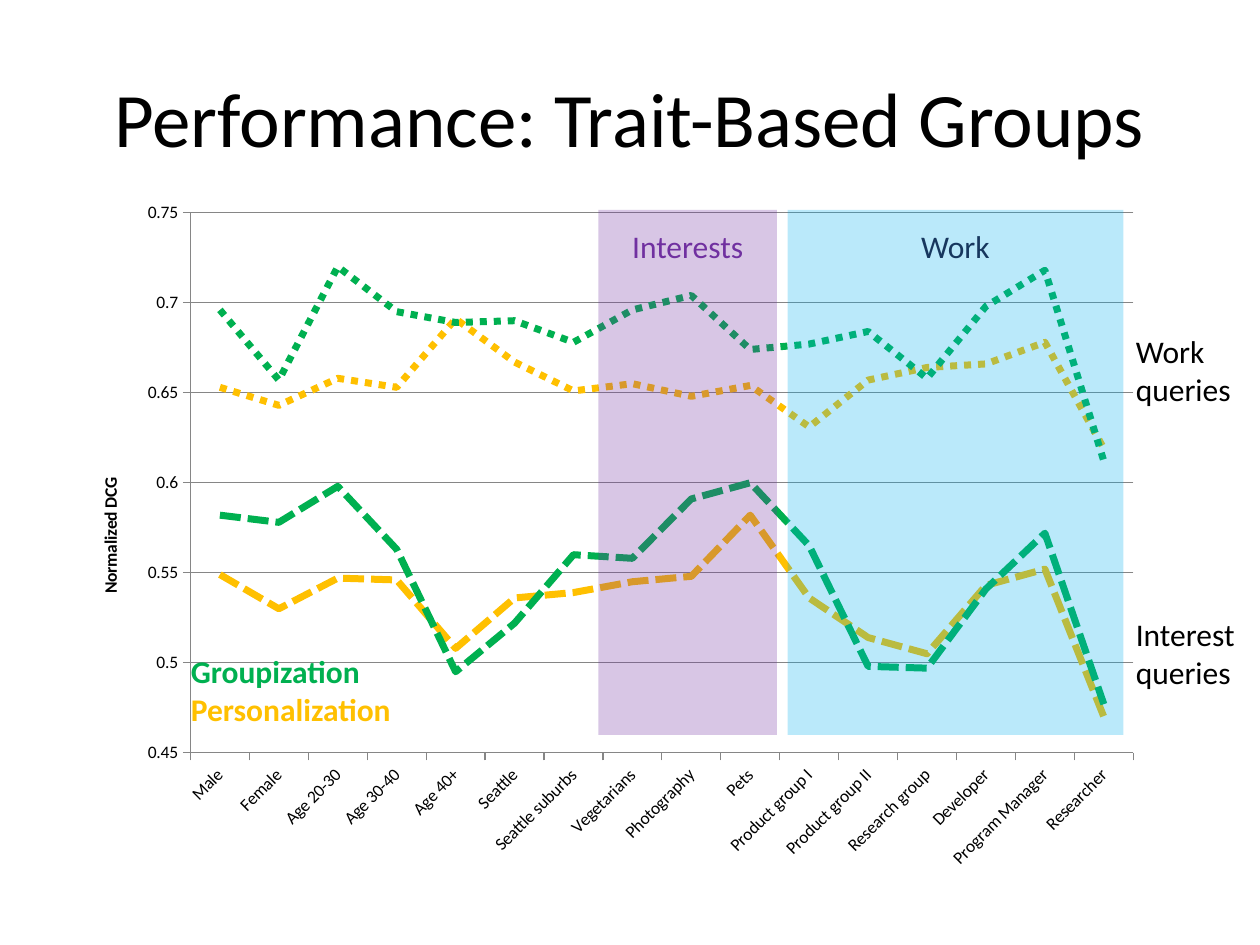
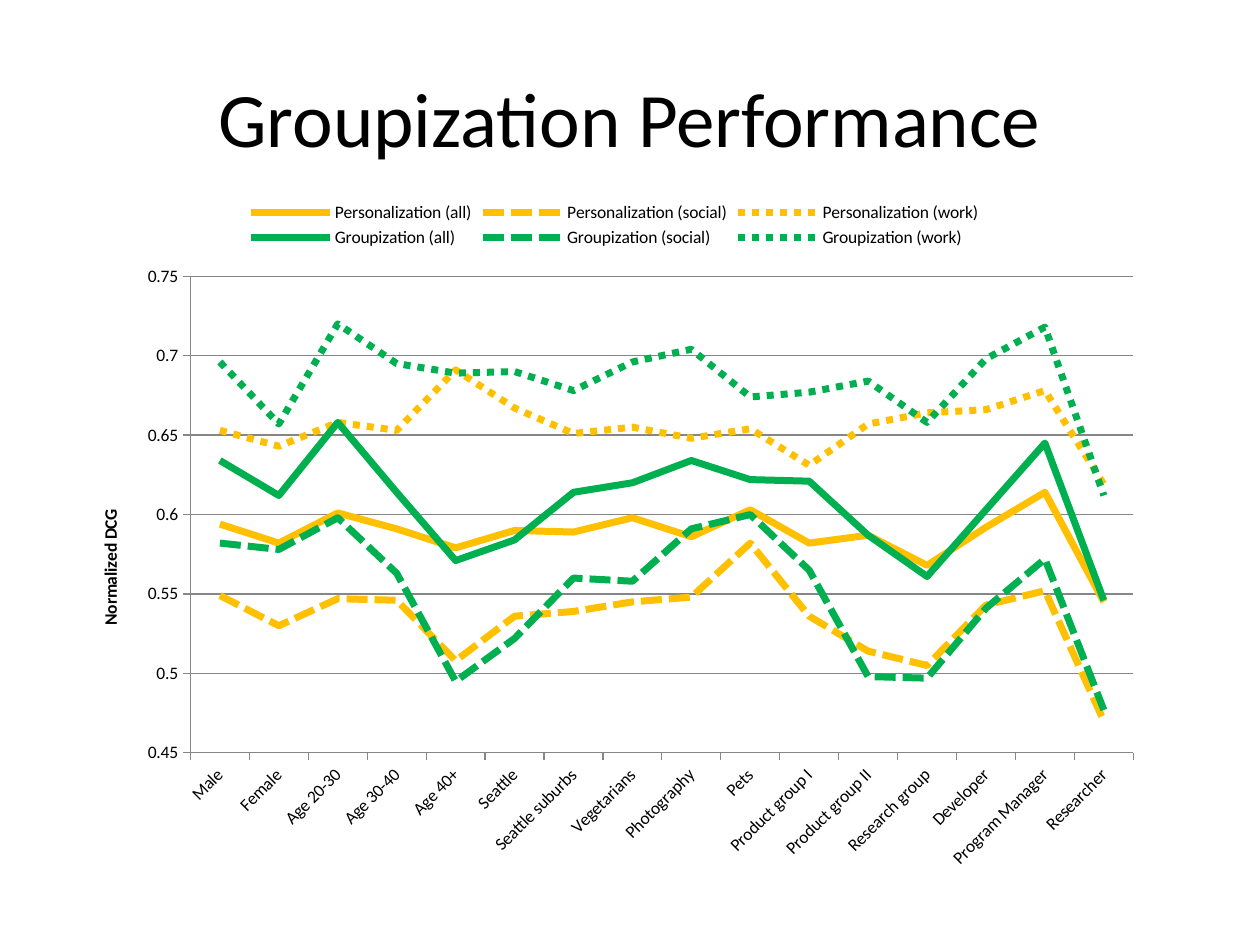
from collections import namedtuple

from lxml.etree import SubElement
from pptx import Presentation
from pptx.chart.data import CategoryChartData
from pptx.dml.color import RGBColor
from pptx.enum.chart import XL_CHART_TYPE, XL_LEGEND_POSITION, XL_TICK_MARK
from pptx.enum.dml import MSO_LINE
from pptx.enum.shapes import MSO_SHAPE
from pptx.enum.text import MSO_ANCHOR, PP_ALIGN
from pptx.oxml.ns import qn
from pptx.util import Pt

Box = namedtuple("Box", "left top width height")

BLACK = RGBColor(0x00, 0x00, 0x00)
GRID_GRAY = RGBColor(0x86, 0x86, 0x86)
AMBER = RGBColor(0xFF, 0xC0, 0x00)
GREEN = RGBColor(0x00, 0xB0, 0x50)
PURPLE = RGBColor(0x70, 0x30, 0xA0)
SKY = RGBColor(0x00, 0xB0, 0xF0)
NAVY = RGBColor(0x17, 0x37, 0x5E)

FONT = "Calibri"
TITLE_BOX = Box(36, 21.6, 648, 90)
CHART_BOX = Box(42, 108, 618, 396)
TITLE_FORMAT = {"name": FONT, "size": Pt(44)}
CHART_FORMAT = {"name": FONT, "size": Pt(10), "bold": False}
AXIS_TITLE_FORMAT = {"name": FONT, "size": Pt(10), "bold": True}
LABEL_FORMAT = {"name": FONT, "size": Pt(18), "bold": False}
KEY_FORMAT = {**LABEL_FORMAT, "bold": True}

GROUPS = ["Male", "Female", "Age 20-30", "Age 30-40", "Age 40+", "Seattle",
          "Seattle suburbs", "Vegetarians", "Photography", "Pets",
          "Product group I", "Product group II", "Research group",
          "Developer", "Program Manager", "Researcher"]
METHOD_COLORS = {"Personalization": AMBER, "Groupization": GREEN}
QUERY_DASHES = {"all": None, "social": MSO_LINE.SQUARE_DOT, "work": MSO_LINE.ROUND_DOT}
QUERY_DASH_VALUES = {"social": "sysDash", "work": "sysDot"}
SCORES = {
    ("Personalization", "all"): [
        0.594, 0.582, 0.601, 0.591, 0.579, 0.59, 0.589, 0.598,
        0.586, 0.603, 0.582, 0.587, 0.568, 0.592, 0.614, 0.545],
    ("Personalization", "social"): [
        0.549, 0.53, 0.547, 0.546, 0.508, 0.536, 0.539, 0.545,
        0.548, 0.582, 0.536, 0.514, 0.505, 0.543, 0.552, 0.47],
    ("Personalization", "work"): [
        0.653, 0.643, 0.658, 0.653, 0.691, 0.667, 0.651, 0.655,
        0.648, 0.654, 0.631, 0.657, 0.664, 0.666, 0.678, 0.619],
    ("Groupization", "all"): [
        0.634, 0.612, 0.658, 0.614, 0.571, 0.584, 0.614, 0.62,
        0.634, 0.622, 0.621, 0.587, 0.561, 0.603, 0.645, 0.546],
    ("Groupization", "social"): [
        0.582, 0.578, 0.598, 0.563, 0.495, 0.522, 0.56, 0.558,
        0.591, 0.6, 0.565, 0.498, 0.497, 0.541, 0.572, 0.477],
    ("Groupization", "work"): [
        0.696, 0.657, 0.72, 0.695, 0.689, 0.69, 0.678, 0.696,
        0.704, 0.674, 0.677, 0.684, 0.658, 0.698, 0.718, 0.612],
}


def in_points(box):
    """Return the four lengths of a box as Pt values."""
    return [Pt(length) for length in box]


def inside(box, left, top, width, height):
    """Return a box offset from the corner of another box."""
    return Box(box.left + left, box.top + top, width, height)


def apply_format(font, values, color=BLACK):
    """Set every format value and the colour on a font."""
    for name, value in values.items():
        setattr(font, name, value)
    font.color.rgb = color


def add_titled_page(deck, title):
    """Add a page with its formatted title."""
    page = deck.slides.add_slide(deck.slide_layouts[5])
    holder = page.shapes.title
    for name, value in zip(Box._fields, in_points(TITLE_BOX)):
        setattr(holder, name, value)
    frame = holder.text_frame
    frame.text = title
    frame.vertical_anchor = MSO_ANCHOR.MIDDLE
    para = frame.paragraphs[0]
    para.alignment = PP_ALIGN.CENTER
    apply_format(para.runs[0].font, TITLE_FORMAT)
    return page


def add_label(page, box, lines, values=LABEL_FORMAT, align=PP_ALIGN.LEFT):
    """Add a text box with one coloured paragraph per line."""
    frame = page.shapes.add_textbox(*in_points(box)).text_frame
    frame.word_wrap = True
    for index, (text, color) in enumerate(lines):
        para = frame.add_paragraph() if index else frame.paragraphs[0]
        para.alignment = align
        span = para.add_run()
        span.text = text
        apply_format(span.font, values, color)


def add_band(page, box, text, fill_color, text_color):
    """Add a see-through band with a label centred near its top."""
    band = page.shapes.add_shape(MSO_SHAPE.RECTANGLE, *in_points(box))
    band.shadow.inherit = False
    band.line.fill.background()
    band.fill.solid()
    band.fill.fore_color.rgb = fill_color
    color = band._element.spPr.find(".//" + qn("a:srgbClr"))
    SubElement(color, qn("a:alpha"), val="27000")
    label_width = 78
    label_box = inside(box, (box.width - label_width) / 2, 6, label_width, 29)
    add_label(page, label_box, [(text, text_color)], align=PP_ALIGN.CENTER)


def format_axes(chart):
    """Set the scale, grid, ticks and titles of both axes."""
    scale, groups = chart.value_axis, chart.category_axis
    for name, value in {"minimum_scale": 0.45, "maximum_scale": 0.75,
                        "major_unit": 0.05, "has_major_gridlines": True}.items():
        setattr(scale, name, value)
    for axis in (scale, groups):
        axis.major_tick_mark = XL_TICK_MARK.OUTSIDE
        apply_format(axis.tick_labels.font, CHART_FORMAT)
    for line in (scale.format.line, groups.format.line, scale.major_gridlines.format.line):
        line.color.rgb = GRID_GRAY
        line.width = Pt(0.75)
    groups._element.find(qn("c:txPr")).find(qn("a:bodyPr")).set("rot", "-2700000")
    frame = scale.axis_title.text_frame
    frame.text = "Normalized DCG"
    apply_format(frame.paragraphs[0].runs[0].font, AXIS_TITLE_FORMAT)


def add_score_chart(page, box, queries, legend):
    """Add the line chart of scores for the chosen kinds of query."""
    keys = [key for key in SCORES if key[1] in queries]
    data = CategoryChartData()
    data.categories = GROUPS
    for method, query in keys:
        data.add_series(f"{method} ({query})", SCORES[method, query])
    chart = page.shapes.add_chart(XL_CHART_TYPE.LINE, *in_points(box), data).chart
    chart.has_title = False
    apply_format(chart.font, CHART_FORMAT)
    chart.has_legend = legend
    if legend:
        chart.legend.position = XL_LEGEND_POSITION.TOP
        chart.legend.include_in_layout = False
        apply_format(chart.legend.font, CHART_FORMAT)
    format_axes(chart)
    for (method, query), series in zip(keys, chart.plots[0].series):
        series.smooth = False
        line = series.format.line
        line.color.rgb = METHOD_COLORS[method]
        line.width = Pt(4)
        if QUERY_DASHES[query]:
            line.dash_style = QUERY_DASHES[query]
            dash = series._element.find(".//" + qn("a:prstDash"))
            dash.set("val", QUERY_DASH_VALUES[query])


def add_trait_notes(page, box):
    """Add the method key, query labels and bands over a chart box."""
    add_label(page, inside(box, 60, 261, 144, 51),
              [(method, METHOD_COLORS[method]) for method in ("Groupization", "Personalization")],
              KEY_FORMAT)
    add_label(page, inside(box, 600, 78, 78, 51), [("Work", BLACK), ("queries", BLACK)])
    add_label(page, inside(box, 600, 240, 72, 51), [("Interest queries", BLACK)])
    add_band(page, inside(box, 408, 12, 192, 300), "Work", SKY, NAVY)
    add_band(page, inside(box, 300, 12, 102, 300), "Interests", PURPLE, PURPLE)


def main():
    """Build both pages and save the deck."""
    deck = Presentation()
    deck.slide_width, deck.slide_height = Pt(720), Pt(540)
    traits = add_titled_page(deck, "Performance: Trait-Based Groups")
    add_score_chart(traits, CHART_BOX, ("social", "work"), legend=False)
    add_trait_notes(traits, CHART_BOX)
    overall = add_titled_page(deck, "Groupization Performance")
    add_score_chart(overall, CHART_BOX, ("all", "social", "work"), legend=True)
    deck.save("out.pptx")


if __name__ == "__main__":
    main()
